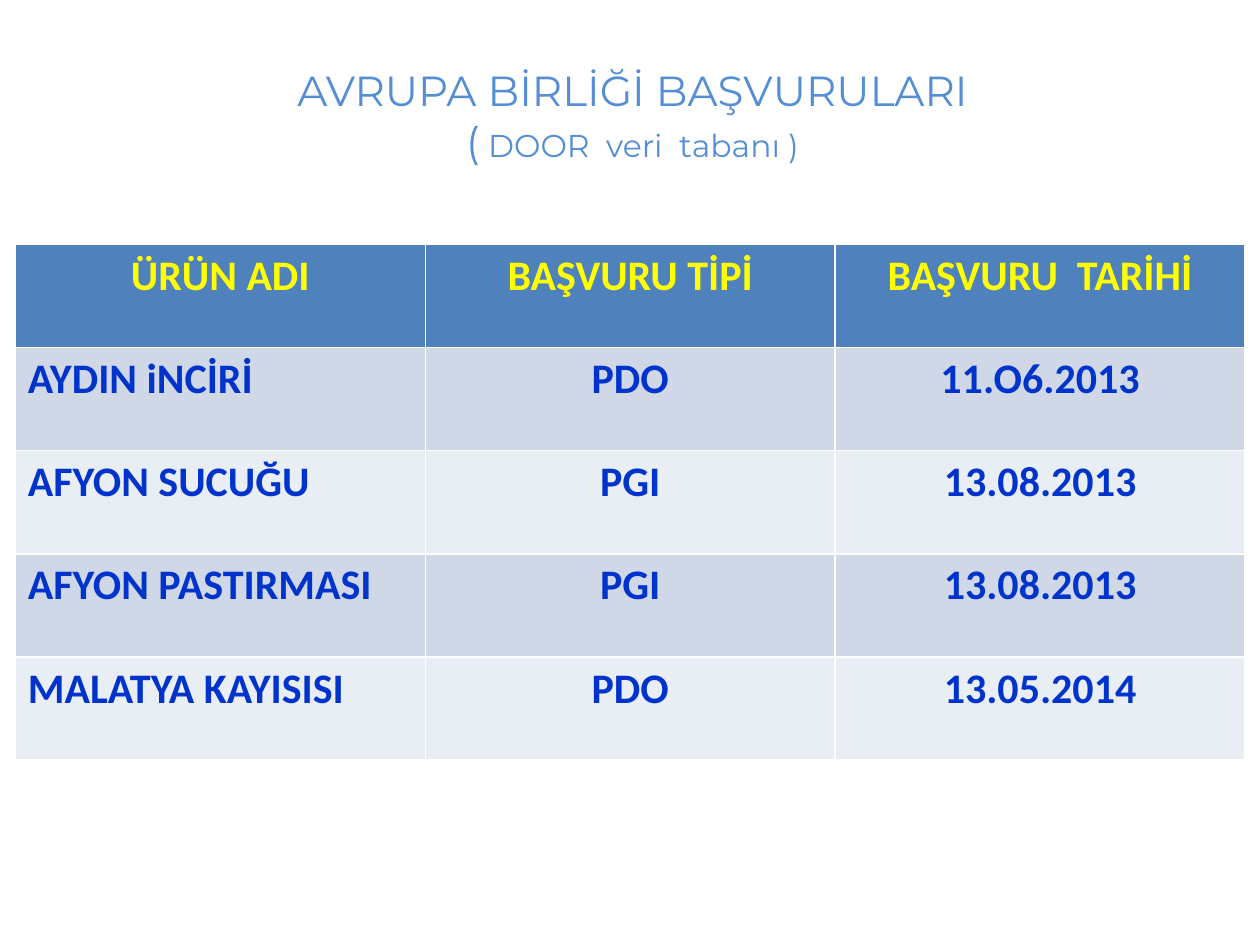
from pptx import Presentation
from pptx.dml.color import RGBColor
from pptx.enum.text import MSO_ANCHOR, PP_ALIGN
from pptx.util import Cm, Pt

LEFT, CENTER = PP_ALIGN.LEFT, PP_ALIGN.CENTER
MIDDLE = MSO_ANCHOR.MIDDLE
TITLE_ONLY = 5

TITLE_LINES = [
    [("AVRUPA BİRLİĞİ BAŞVURULARI", "title")],
    [("(", "title"), (" DOOR  veri  tabanı )", "subtitle")],
]
APPLICATIONS = [
    ("ÜRÜN ADI", "BAŞVURU TİPİ", "BAŞVURU  TARİHİ"),
    ("AYDIN iNCİRİ", "PDO", "11.O6.2013"),
    ("AFYON SUCUĞU", "PGI", "13.08.2013"),
    ("AFYON PASTIRMASI", "PGI", "13.08.2013"),
    ("MALATYA KAYISISI", "PDO", "13.05.2014"),
]
TITLE_BOX = [Cm(value) for value in (0.1, 0.33, 25.3, 3.99)]
TABLE_BOX = [Cm(value) for value in (0.31, 4.93, 24.79, 10.39)]

THEME = {
    "title": {"name": "Montserrat", "size": Pt(24), "color": "558ED5"},
    "subtitle": {"name": "Montserrat", "size": Pt(18), "color": "558ED5"},
    "header": {"name": "Calibri", "size": Pt(24), "bold": True, "color": "FFFF00"},
    "body": {"name": "Calibri", "size": Pt(24), "bold": True, "color": "0033CC"},
    "header_fill": "4F81BD",
    "band_fills": ("D0D8E8", "E9EDF4"),
}


def add_text(paragraph, text, style):
    run = paragraph.add_run()
    run.text = text
    for attribute, value in THEME[style].items():
        if attribute == "color":
            run.font.color.rgb = RGBColor.from_string(value)
        else:
            setattr(run.font, attribute, value)


def place_title(slide):
    title = slide.shapes.title
    title.left, title.top, title.width, title.height = TITLE_BOX
    title.text_frame.vertical_anchor = MIDDLE
    paragraph = title.text_frame.paragraphs[0]
    paragraph.alignment = CENTER
    for index, line in enumerate(TITLE_LINES):
        if index:
            paragraph.add_line_break()
        for text, style in line:
            add_text(paragraph, text, style)


def add_applications(slide):
    shape = slide.shapes.add_table(len(APPLICATIONS), len(APPLICATIONS[0]), *TABLE_BOX)
    for row, values in enumerate(APPLICATIONS):
        style = "body" if row else "header"
        fill = THEME["band_fills"][(row - 1) % 2] if row else THEME["header_fill"]
        for column, text in enumerate(values):
            cell = shape.table.cell(row, column)
            cell.fill.solid()
            cell.fill.fore_color.rgb = RGBColor.from_string(fill)
            paragraph = cell.text_frame.paragraphs[0]
            paragraph.alignment = LEFT if row and column == 0 else CENTER
            add_text(paragraph, text, style)


def main():
    presentation = Presentation()
    presentation.slide_width, presentation.slide_height = Cm(25.4), Cm(19.05)
    slide = presentation.slides.add_slide(presentation.slide_layouts[TITLE_ONLY])
    place_title(slide)
    add_applications(slide)
    presentation.save("out.pptx")


if __name__ == "__main__":
    main()
